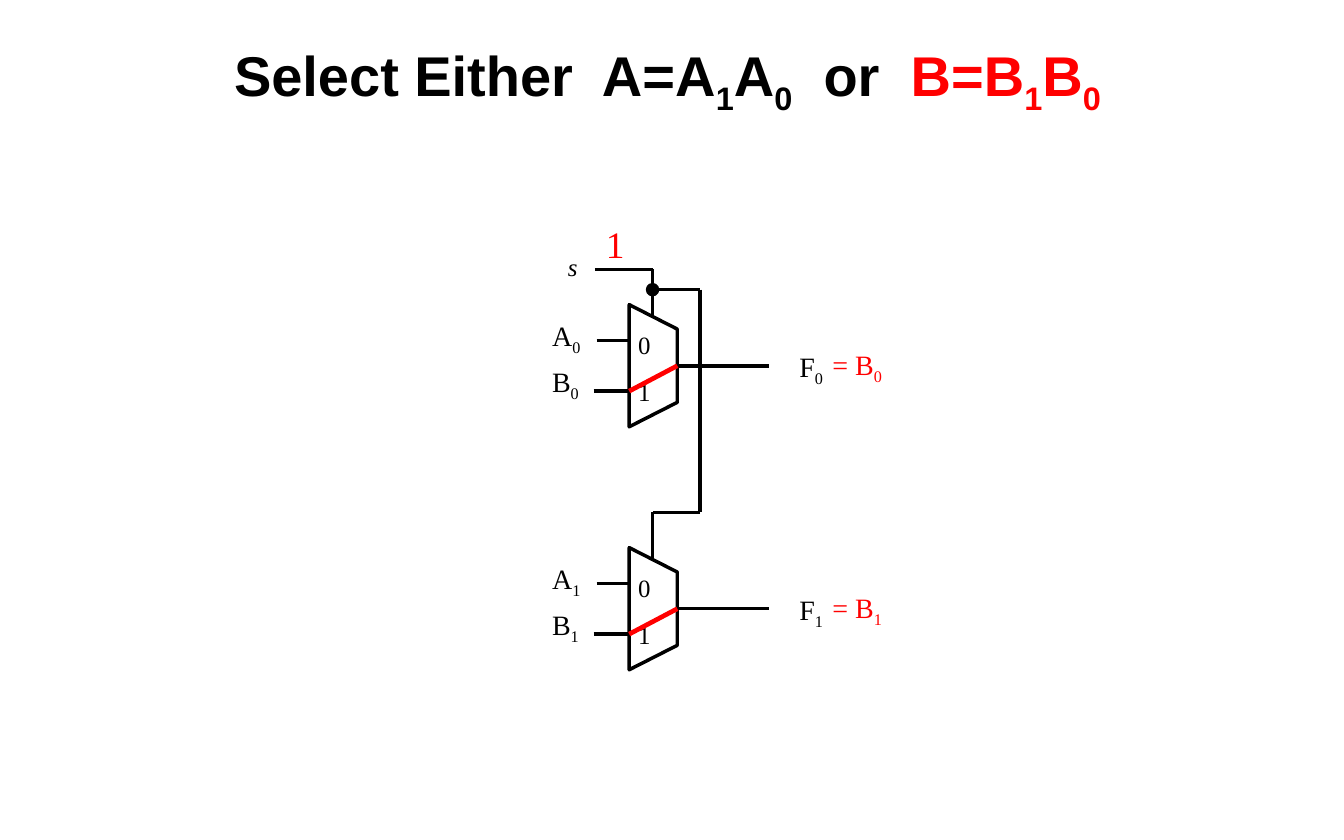
import lxml.etree
import pptx
import pptx.dml.color
import pptx.enum.shapes
import pptx.enum.text
import pptx.oxml.ns
import pptx.util

Cm = pptx.util.Cm
BLACK = "000000"
RED = "FF0000"
SERIF = "Times New Roman"
MUX_WIDTH, MUX_HEIGHT = 1.09, 2.77
MUX_LEFT, MUX_TOPS = 14.27, (6.91, 12.42)
SELECT_X, SELECT_RISE = 0.53, 0.8


def color(hex_string):
    return pptx.dml.color.RGBColor.from_string(hex_string)


def style_line(line, hex_string=BLACK, width=2.25):
    line.color.rgb = color(hex_string)
    line.width = pptx.util.Pt(width)


def add_wire(slide, start, end, hex_string=BLACK, width=2.25):
    wire = slide.shapes.add_connector(
        pptx.enum.shapes.MSO_CONNECTOR.STRAIGHT, *map(Cm, start + end))
    style_line(wire.line, hex_string, width)
    lxml.etree.SubElement(wire._element.spPr, pptx.oxml.ns.qn("a:effectLst"))


def add_text(slide, box, parts, size, margins=None, **formats):
    """Write (text, hex colour, is subscript) parts in one paragraph."""
    shape = slide.shapes.add_textbox(*map(Cm, box))
    frame = shape.text_frame
    frame.word_wrap = False
    if margins is not None:
        for side in ("left", "top", "right", "bottom"):
            setattr(frame, f"margin_{side}", Cm(margins))
    font_values = {"name": SERIF, "size": pptx.util.Pt(size), **formats}
    for text, hex_string, is_subscript in parts:
        run = frame.paragraphs[0].add_run()
        run.text = text
        run.font.color.rgb = color(hex_string)
        for name, value in font_values.items():
            setattr(run.font, name, value)
        if is_subscript:
            run.font._element.set("baseline", "-25000")
    return shape


def add_indexed_label(slide, box, letter, index, hex_string=BLACK):
    add_text(slide, box, [(letter, hex_string, False), (index, hex_string, True)], 18)


def add_title(slide, box):
    parts = [("Select Either  A=A", BLACK, False), ("1", BLACK, True),
             ("A", BLACK, False), ("0", BLACK, True), ("  or  ", BLACK, False),
             ("B=B", RED, False), ("1", RED, True),
             ("B", RED, False), ("0 ", RED, True)]
    frame = add_text(slide, box, parts, 36, name="Arial", bold=True).text_frame
    frame.word_wrap = True
    frame.vertical_anchor = pptx.enum.text.MSO_ANCHOR.MIDDLE
    frame.paragraphs[0].alignment = pptx.enum.text.PP_ALIGN.CENTER


def add_multiplexer(slide, box, index):
    left, top, width, height = box
    right, slant = left + width, height / 5
    input_y = {"A": top + 0.81, "B": top + 1.96}
    output_y = top + height / 2

    corners = [(left, top), (right, top + slant),
               (right, top + height - slant), (left, top + height)]
    points = [(Cm(x), Cm(y)) for x, y in corners]
    builder = slide.shapes.build_freeform(*points[0])
    builder.add_line_segments(points[1:], close=True)
    body = builder.convert_to_shape()
    body.shadow.inherit = False
    body.fill.background()
    style_line(body.line)

    add_wire(slide, (left - 0.74, input_y["A"]), (left, input_y["A"]))
    add_wire(slide, (left - 0.81, input_y["B"]), (left, input_y["B"]))
    add_wire(slide, (right, output_y), (right + 2.08, output_y))
    add_wire(slide, (left + SELECT_X, top - SELECT_RISE), (left + SELECT_X, top + 0.26))

    for digit, offset in (("0", 0.56), ("1", 1.63)):
        add_text(slide, (left + 0.2, top + offset, 0.43, 0.69),
                 [(digit, BLACK, False)], 16, margins=0)
    for letter, offset in (("A", 0.2), ("B", 1.24)):
        add_indexed_label(slide, (left - 2, top + offset, 1.17, 1.02), letter, index)
    add_indexed_label(slide, (left + 3.61, top + 0.89, 1.09, 1.02), "F", index)

    add_wire(slide, (left, input_y["B"]), (right, output_y), RED, 3)
    add_indexed_label(slide, (left + 4.36, top + 0.84, 1.68, 1.02), "= B", index, RED)


def add_select_line(slide, box):
    """Draw the select input and its branch down the right side of the box."""
    left, top, width, height = box
    right, bottom = left + width, top + height
    trunk_x = MUX_LEFT + SELECT_X
    branch_y = top + 0.46
    corners = [(trunk_x, branch_y), (right, branch_y), (right, bottom), (trunk_x, bottom)]

    add_wire(slide, (left, top), (trunk_x, top))
    for start, end in zip(corners, corners[1:]):
        add_wire(slide, start, end)

    diameter = 0.28
    node = slide.shapes.add_shape(
        pptx.enum.shapes.MSO_SHAPE.OVAL, Cm(trunk_x - diameter / 2),
        Cm(branch_y - diameter / 2), Cm(diameter), Cm(diameter))
    node.shadow.inherit = False
    node.fill.solid()
    node.fill.fore_color.rgb = color(BLACK)
    style_line(node.line, width=0.75)

    add_text(slide, (left - 0.61, top - 0.4, 0.36, 0.69),
             [("s", BLACK, False)], 16, margins=0, italic=True)
    add_text(slide, (left, top - 1.21, 0.94, 1.3), [("1", RED, False)], 24)


def main():
    presentation = pptx.Presentation()
    presentation.slide_width = Cm(30.48)
    presentation.slide_height = Cm(19.05)
    slide = presentation.slides.add_slide(presentation.slide_layouts[6])

    add_title(slide, (0, 0.84, 30.48, 1.9))
    for index, top in enumerate(MUX_TOPS):
        add_multiplexer(slide, (MUX_LEFT, top, MUX_WIDTH, MUX_HEIGHT), str(index))
    select_top, select_bottom = (top - SELECT_RISE for top in MUX_TOPS)
    add_select_line(slide, (13.49, select_top, 2.39, select_bottom - select_top))

    presentation.save("out.pptx")


if __name__ == "__main__":
    main()
